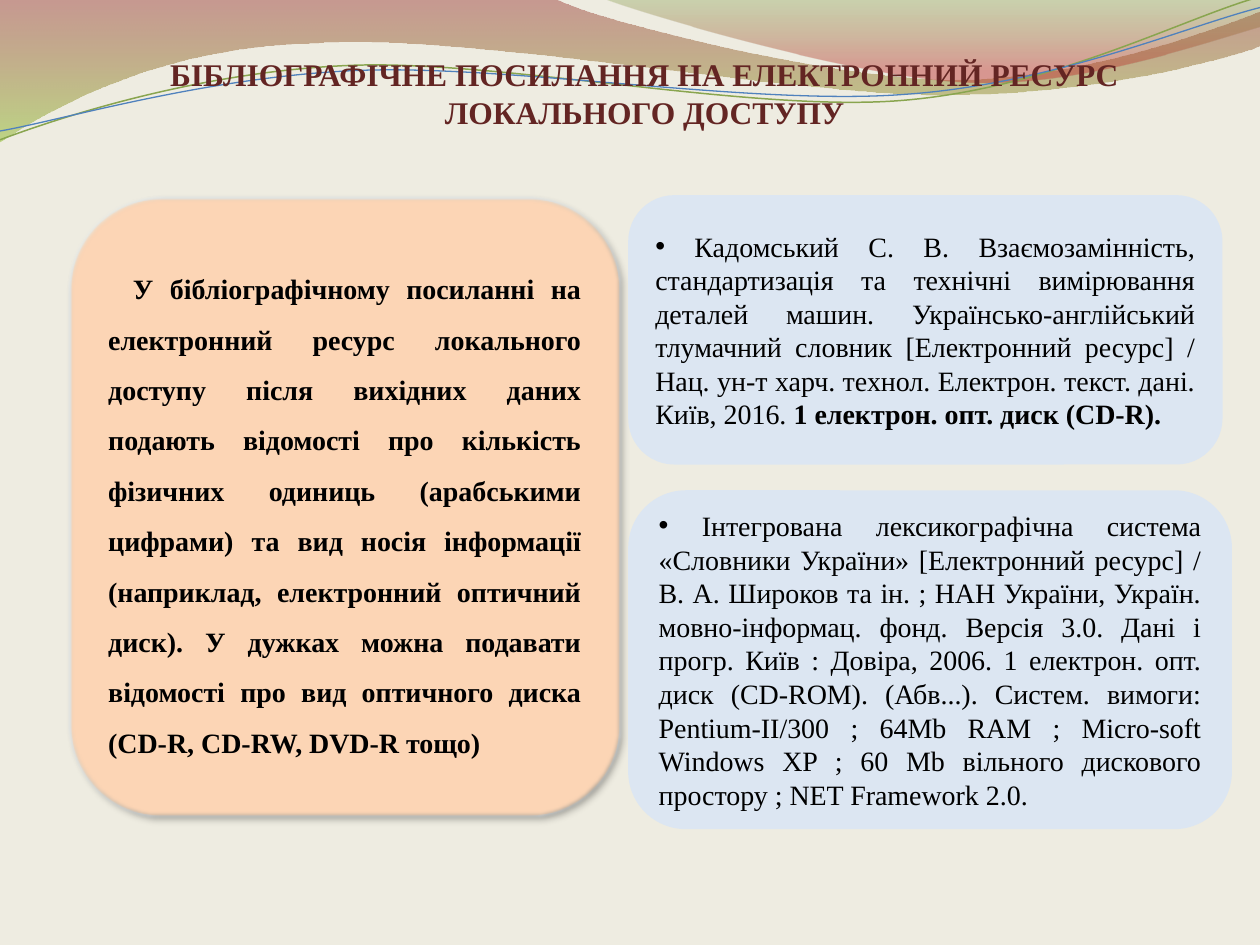
from lxml import etree
from pptx import Presentation
from pptx.dml.color import RGBColor
from pptx.enum import shapes, text
from pptx.oxml.ns import qn
from pptx.util import Cm, Pt

FONT = "Times New Roman"
COLORS = {
    "background": "EEECE1", "title": "632523", "text": "000000",
    "rule": "FCD5B5", "example": "DCE6F2",
    "wine": "973330", "lime": "95C238", "olive": "769537", "red": "BE3330",
    "green_line": "89A54F", "blue_line": "4F81BD",
}
TENTH = 2.54  # wave points are in tenths of the slide width, given in cm

# Each step is an end point, or two control points and an end point
BANDS = [
    ([[(0, 0)], [(4.4, -0.01)],
      [(4.76, 0.17), (6.64, 0.63), (7.58, 0.63)],
      [(8.53, 0.63), (9.58, 0.26), (10, 0.09)], [(10.01, 0.36)],
      [(9.83, 0.44), (8.7, 0.76), (7.46, 0.75)],
      [(6.22, 0.75), (3.82, 0.28), (2.57, 0.34)],
      [(1.29, 0.36), (0.46, 0.83), (-0.01, 1.13)], [(0, 0)]],
     [("wine", 0, 45), ("lime", 1, 55)]),
    ([[(4.79, -0.01)], [(5.09, 0.11), (6.82, 0.62), (7.69, 0.65)],
      [(8.56, 0.69), (9.61, 0.32), (10, 0.21)], [(10, 0)], [(4.79, -0.01)]],
     [("olive", 0, 30), ("red", 0.8, 45)]),
]
LINES = [
    ([[(0, 1.11)], [(0.48, 0.93), (1.58, 0.57), (2.77, 0.52)],
      [(3.95, 0.47), (5.93, 0.89), (7.13, 0.8)],
      [(8.33, 0.71), (9.38, 0.15), (9.98, -0.02)]], "green_line", 0.85),
    ([[(0, 1.04)], [(0.47, 0.96), (1.64, 0.61), (2.83, 0.56)],
      [(4.03, 0.51), (5.97, 0.84), (7.17, 0.75)],
      [(8.36, 0.67), (9.41, 0.21), (10, 0.06)]], "blue_line", 0.75),
]

TITLE = "БІБЛІОГРАФІЧНЕ ПОСИЛАННЯ НА ЕЛЕКТРОННИЙ РЕСУРС ЛОКАЛЬНОГО ДОСТУПУ"
RULE = (
    "У бібліографічному посиланні на електронний ресурс локального доступу "
    "після вихідних даних подають відомості про кількість фізичних одиниць "
    "(арабськими цифрами) та вид носія інформації (наприклад, електронний "
    "оптичний диск). У дужках можна подавати відомості про вид оптичного "
    "диска (CD-R, CD-RW, DVD-R тощо)"
)
DICTIONARY = (
    " Кадомський С. В. Взаємозамінність, стандартизація та технічні "
    "вимірювання деталей машин. Українсько-англійський тлумачний словник "
    "[Електронний ресурс] / Нац. ун-т харч. технол. Електрон. текст. дані. "
    "Київ, 2016. "
)
DISC = "1 електрон. опт. диск (CD-R)."
SYSTEM = (
    " Інтегрована лексикографічна система «Словники України» [Електронний "
    "ресурс] / В. А. Широков та ін. ; НАН України, Україн. мовно-інформац. "
    "фонд. Версія 3.0. Дані і прогр. Київ : Довіра, 2006. 1 електрон. опт. "
    "диск (CD-ROM). (Абв...). Систем. вимоги: Pentium-II/300 ; 64Mb RAM ; "
    "Micro-soft Windows XP ; 60 Mb вільного дискового простору ; "
    "NET Framework 2.0."
)


def rgb(name):
    return RGBColor.from_string(COLORS[name])


def add_text(paragraph, content, size=16, color="text", bold=False):
    run = paragraph.add_run()
    run.text = content
    run.font.name = FONT
    run.font.size = Pt(size)
    run.font.bold = bold
    run.font.color.rgb = rgb(color)


def add_wave(slide, left, top, steps, close):
    points = [(Cm(left + x * TENTH), Cm(top + y * TENTH))
              for step in steps for x, y in step]
    builder = slide.shapes.build_freeform(*points[0])
    builder.add_line_segments(points[1:], close=close)
    wave = builder.convert_to_shape()
    wave.shadow.inherit = False
    # Join each three segments of a curved step into one Bézier curve
    segments = iter(list(wave._element.spPr.iter(qn("a:lnTo"))))
    for step in steps[1:]:
        parts = [next(segments) for _ in step]
        if len(parts) == 3:
            curve = etree.Element(qn("a:cubicBezTo"))
            parts[0].addprevious(curve)
            for part in parts:
                curve.append(part[0])
                part.getparent().remove(part)
    return wave


def add_header_waves(slide, left, top):
    # Translucent bands
    for steps, stops in BANDS:
        band = add_wave(slide, left, top, steps, close=True)
        band.line.fill.background()
        band.fill.gradient()
        band.fill.gradient_angle = 270
        for stop, (color, position, _) in zip(band.fill.gradient_stops, stops):
            stop.color.rgb = rgb(color)
            stop.position = position
        tints = band._element.spPr.iter(qn("a:srgbClr"))
        for tint, (_, _, opacity) in zip(tints, stops):
            etree.SubElement(tint, qn("a:alpha"), val=str(opacity * 1000))
    # Thin lines
    for steps, color, width in LINES:
        line = add_wave(slide, left, top, steps, close=False)
        line.fill.background()
        line.line.color.rgb = rgb(color)
        line.line.width = Pt(width)


def place_title(slide, left, top, width, height):
    title = slide.shapes.title
    title.left, title.top = Cm(left), Cm(top)
    title.width, title.height = Cm(width), Cm(height)
    frame = title.text_frame
    frame.word_wrap = True
    frame.auto_size = text.MSO_AUTO_SIZE.NONE
    frame.vertical_anchor = text.MSO_ANCHOR.TOP
    frame.margin_left = frame.margin_right = Cm(0.2)
    paragraph = frame.paragraphs[0]
    paragraph.alignment = text.PP_ALIGN.CENTER
    add_text(paragraph, TITLE, size=18, color="title", bold=True)
    slide.shapes._spTree.append(title._element)  # in front of the waves


def add_card(slide, left, top, width, height, fill):
    """Add a rounded card and return it with its justified paragraph."""
    card = slide.shapes.add_shape(
        shapes.MSO_SHAPE.ROUNDED_RECTANGLE,
        Cm(left), Cm(top), Cm(width), Cm(height))
    card.shadow.inherit = False
    card.fill.solid()
    card.fill.fore_color.rgb = rgb(fill)
    card.line.color.rgb = rgb("example")
    card.line.width = Pt(2)
    frame = card.text_frame
    frame.word_wrap = True
    frame.vertical_anchor = text.MSO_ANCHOR.MIDDLE
    paragraph = frame.paragraphs[0]
    paragraph.alignment = text.PP_ALIGN.JUSTIFY
    return card, paragraph


def add_rule_card(slide, left, top, width, height):
    card, paragraph = add_card(slide, left, top, width, height, "rule")
    # Shadow and soft edge
    effects = card._element.spPr.find(qn("a:effectLst"))
    shadow = etree.SubElement(
        effects, qn("a:outerShdw"), blurRad=str(Pt(4)), dist=str(Pt(3)),
        dir="2700000", algn="tl", rotWithShape="0")
    black = etree.SubElement(shadow, qn("a:srgbClr"), val=COLORS["text"])
    etree.SubElement(black, qn("a:alpha"), val="40000")
    etree.SubElement(effects, qn("a:softEdge"), rad=str(Pt(2.5)))
    paragraph.line_spacing = 1.5
    paragraph._p.get_or_add_pPr().set("indent", str(Cm(0.5)))
    add_text(paragraph, RULE, bold=True)


def add_example_card(slide, left, top, width, height, citation, ending=""):
    _, paragraph = add_card(slide, left, top, width, height, "example")
    properties = paragraph._p.get_or_add_pPr()
    etree.SubElement(properties, qn("a:buFont"), typeface="Arial")
    etree.SubElement(properties, qn("a:buChar"), char="•")
    add_text(paragraph, citation)
    if ending:
        add_text(paragraph, ending, bold=True)


def main():
    presentation = Presentation()
    presentation.slide_width, presentation.slide_height = Cm(25.4), Cm(19.05)
    slide = presentation.slides.add_slide(presentation.slide_layouts[5])
    slide.background.fill.solid()
    slide.background.fill.fore_color.rgb = rgb("background")
    add_header_waves(slide, 0, 0)
    place_title(slide, 3.18, 0.99, 19.63, 1.8)
    add_rule_card(slide, 1.39, 3.97, 11.12, 12.5)
    add_example_card(slide, 12.7, 3.97, 11.91, 5.36, DICTIONARY, DISC)
    add_example_card(slide, 12.7, 9.92, 12.1, 6.76, SYSTEM)
    presentation.save("out.pptx")


if __name__ == "__main__":
    main()
